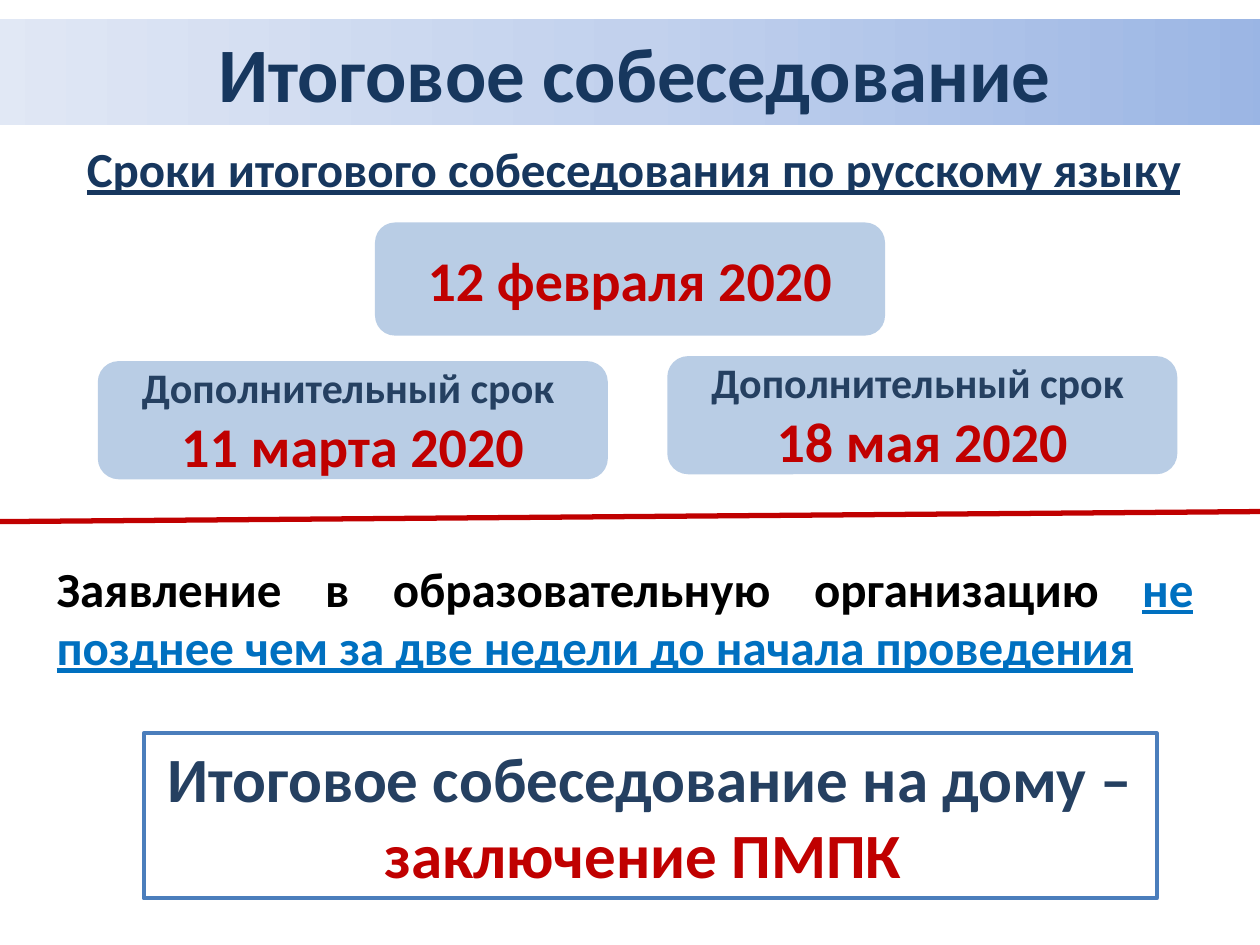
from copy import deepcopy
from lxml.etree import SubElement
from pptx import Presentation
from pptx.dml.color import RGBColor
from pptx.enum.shapes import MSO_CONNECTOR, MSO_SHAPE
from pptx.enum.text import MSO_ANCHOR, PP_ALIGN
from pptx.oxml.ns import qn
from pptx.util import Inches, Pt

NAVY, SLATE, RED, BLUE, PALE = "17375E", "254061", "C00000", "0070C0", "B9CDE5"

presentation = Presentation()
presentation.slide_width = Inches(10)
presentation.slide_height = Inches(7.5)
column = presentation.slide_width / 100
row = presentation.slide_height / 75
slide = presentation.slides.add_slide(presentation.slide_layouts[6])


def color(value):
    return RGBColor.from_string(value)


def add_block(left, top, width, height, paragraphs, preset=None,
              alignment=PP_ALIGN.CENTER, anchor=MSO_ANCHOR.TOP):
    box = (int(left * column), int(top * row), int(width * column), int(height * row))
    if preset is None:
        shape = slide.shapes.add_textbox(*box)
    else:
        shape = slide.shapes.add_shape(preset, *box)
        shape.shadow.inherit = False
    text_frame = shape.text_frame
    text_frame.word_wrap = True
    text_frame.vertical_anchor = anchor
    text_frame.text = "\n".join(runs[0][0] for runs in paragraphs)
    for paragraph, runs in zip(text_frame.paragraphs, paragraphs):
        paragraph.alignment = alignment
        for text, *_ in runs[1:]:
            paragraph.add_run().text = text
        for run, (_, size, ink, underline) in zip(paragraph.runs, runs):
            run.font.name = "Calibri"
            run.font.size = Pt(size)
            run.font.bold = True
            run.font.underline = underline
            run.font.color.rgb = color(ink)
    return shape


banner = add_block(-1.2, 1.5, 103.2, 8.4, [[("Итоговое собеседование", 44, NAVY, False)]],
                   MSO_SHAPE.RECTANGLE)
banner.line.fill.background()
banner.fill.gradient()
banner.fill.gradient_angle = 180
stop_list = banner.fill.gradient_stops[0]._gs.getparent()
stop_list.append(deepcopy(stop_list[-1]))
for stop, position, shade in zip(banner.fill.gradient_stops, (0, 0.5, 1),
                                 ("9AB5E4", "C2D1ED", "E1E8F5")):
    stop.position = position
    stop.color.rgb = color(shade)

subtitle = add_block(5.9, 10.5, 89.8, 5.7,
                     [[("Сроки итогового собеседования по русскому языку", 28, NAVY, True)]],
                     alignment=PP_ALIGN.LEFT)
subtitle.text_frame.word_wrap = False

extra = [("Дополнительный срок ", 24, SLATE, False)]
for left, top, height, date, heading in (
    (29.9, 17.8, 8.7, "12 февраля 2020", []),
    (7.9, 28.8, 9.1, "11 марта 2020", [extra]),
    (53.1, 28.4, 9.1, "18 мая 2020", [extra]),
):
    card = add_block(left, top, 40.2, height, heading + [[(date, 32, RED, False)]],
                     MSO_SHAPE.ROUNDED_RECTANGLE, anchor=MSO_ANCHOR.MIDDLE)
    card.fill.solid()
    card.fill.fore_color.rgb = color(PALE)
    card.line.color.rgb = color(PALE)
    card.line.width = Pt(2)

divider = slide.shapes.add_connector(MSO_CONNECTOR.STRAIGHT, 0, int(41.4 * row),
                                     int(100 * column), int(40.6 * row))
divider.line.color.rgb = color(RED)
divider.line.width = Pt(3)
SubElement(divider._element.spPr, qn("a:effectLst"))

add_block(3.5, 43.8, 92.2, 10.4,
          [[("Заявление в образовательную организацию ", 28, "000000", False),
            ("не позднее чем за две недели до начала проведения", 28, BLUE, True)]],
          alignment=PP_ALIGN.JUSTIFY)

home = add_block(11.4, 58.2, 80.4, 13.1,
                 [[("Итоговое собеседование на дому – ", 36, SLATE, False),
                   ("заключение ПМПК ", 36, RED, False)]], MSO_SHAPE.RECTANGLE)
home.fill.background()
home.line.color.rgb = color("4B7EBC")
home.line.width = Pt(2.25)

presentation.save("out.pptx")
